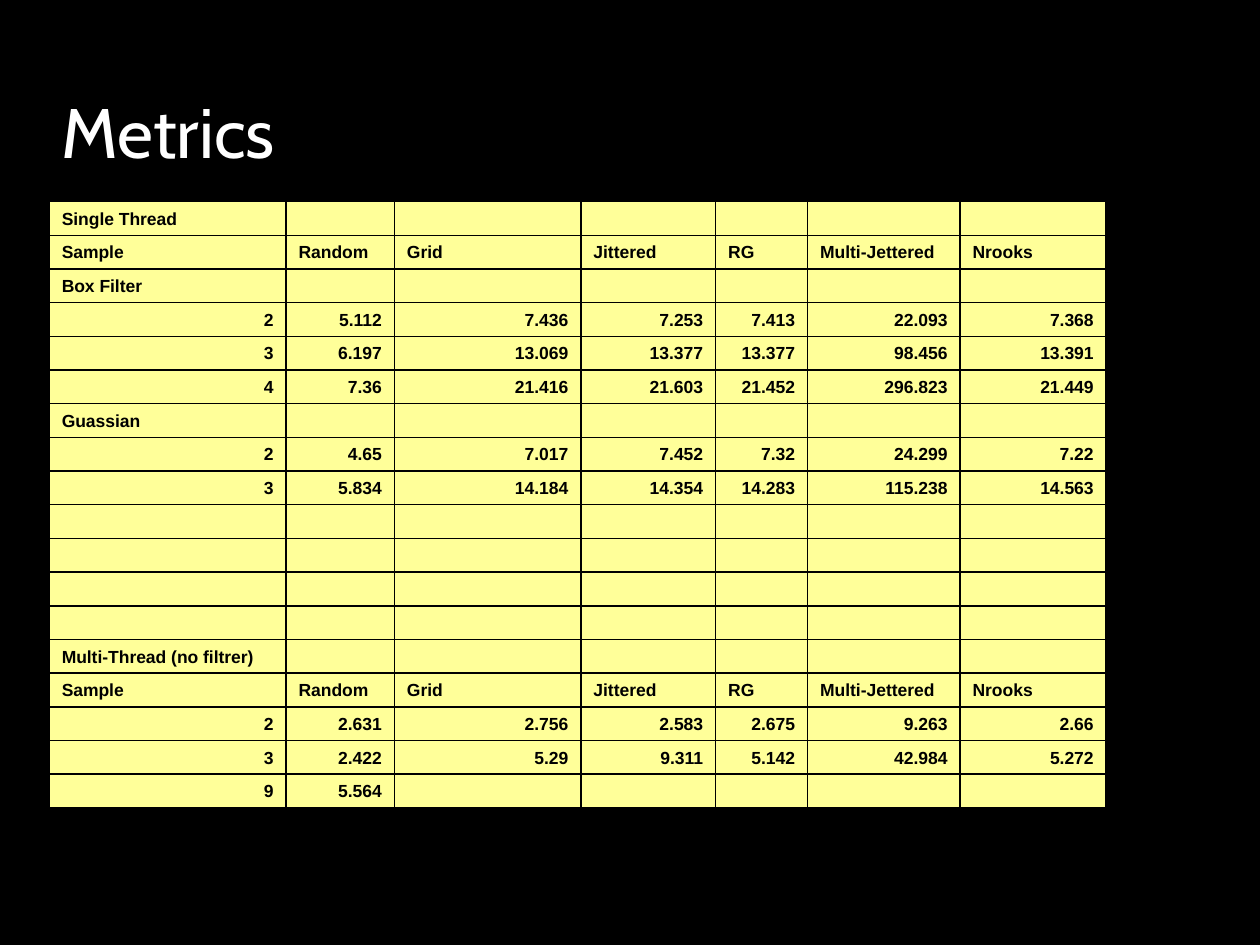
"""Build the Metrics slide with its table of sampling times."""
from lxml.etree import SubElement
from pptx import Presentation
from pptx.dml.color import RGBColor
from pptx.enum.text import MSO_ANCHOR, PP_ALIGN
from pptx.oxml.ns import qn
from pptx.util import Pt

SCALE = 9144  # EMU per px
COLORS = {"background": "000000", "title": "FFFFFF", "cell": "FFFF99", "ink": "000000"}
COLUMN_WIDTHS = [188, 86, 148, 107, 73, 121, 116]
TABLE_HEIGHT = 474
HEADER = ["Sample", "Random", "Grid", "Jittered", "RG", "Multi-Jettered", "Nrooks"]
ROWS = [
    ["Single Thread"],
    HEADER,
    ["Box Filter"],
    ["2", "5.112", "7.436", "7.253", "7.413", "22.093", "7.368"],
    ["3", "6.197", "13.069", "13.377", "13.377", "98.456", "13.391"],
    ["4", "7.36", "21.416", "21.603", "21.452", "296.823", "21.449"],
    ["Guassian"],
    ["2", "4.65", "7.017", "7.452", "7.32", "24.299", "7.22"],
    ["3", "5.834", "14.184", "14.354", "14.283", "115.238", "14.563"],
    [],
    [],
    [],
    [],
    ["Multi-Thread (no filtrer)"],
    HEADER,
    ["2", "2.631", "2.756", "2.583", "2.675", "9.263", "2.66"],
    ["3", "2.422", "5.29", "9.311", "5.142", "42.984", "5.272"],
    ["9", "5.564"],
]


def add_span(para, text, font, size, color, bold=False):
    span = para.add_run()
    span.text = text
    span.font.name = font
    span.font.size = Pt(size)
    span.font.bold = bold
    span.font.color.rgb = RGBColor.from_string(COLORS[color])


def add_borders(cell):
    properties = cell._tc.get_or_add_tcPr()
    for position, side in enumerate(("lnL", "lnR", "lnT", "lnB")):
        line = properties.makeelement(qn(f"a:{side}"), {"w": str(Pt(1))})
        fill = SubElement(line, qn("a:solidFill"))
        SubElement(fill, qn("a:srgbClr"), val=COLORS["ink"])
        properties.insert(position, line)


deck = Presentation()
deck.slide_width = 1000 * SCALE
deck.slide_height = 750 * SCALE
page = deck.slides.add_slide(deck.slide_layouts[6])
page.background.fill.solid()
page.background.fill.fore_color.rgb = RGBColor.from_string(COLORS["background"])

box = page.shapes.add_textbox(39 * SCALE, 25 * SCALE, 840 * SCALE, 117 * SCALE)
box.text_frame.word_wrap = True
box.text_frame.vertical_anchor = MSO_ANCHOR.BOTTOM
para = box.text_frame.paragraphs[0]
para.space_before = Pt(4)
add_span(para, "Metrics", "Cabin", 40, "title")

frame = page.shapes.add_table(
    len(ROWS), len(COLUMN_WIDTHS), 39 * SCALE, 160 * SCALE,
    sum(COLUMN_WIDTHS) * SCALE, TABLE_HEIGHT * SCALE,
)
table = frame.table
table.first_row = False
table.horz_banding = False
for column, width in zip(table.columns, COLUMN_WIDTHS):
    column.width = width * SCALE

for row, values in zip(table.rows, ROWS):
    row.height = TABLE_HEIGHT * SCALE // len(ROWS)
    for index, cell in enumerate(row.cells):
        cell.vertical_anchor = MSO_ANCHOR.BOTTOM
        cell.fill.solid()
        cell.fill.fore_color.rgb = RGBColor.from_string(COLORS["cell"])
        add_borders(cell)
        para = cell.text_frame.paragraphs[0]
        if index < len(values):
            text = values[index]
            para.alignment = PP_ALIGN.RIGHT if text[0].isdigit() else PP_ALIGN.LEFT
            add_span(para, text, "Arial", 10, "ink", bold=True)
        else:
            SubElement(para._p, qn("a:endParaRPr"), sz="1000")

deck.save("out.pptx")
